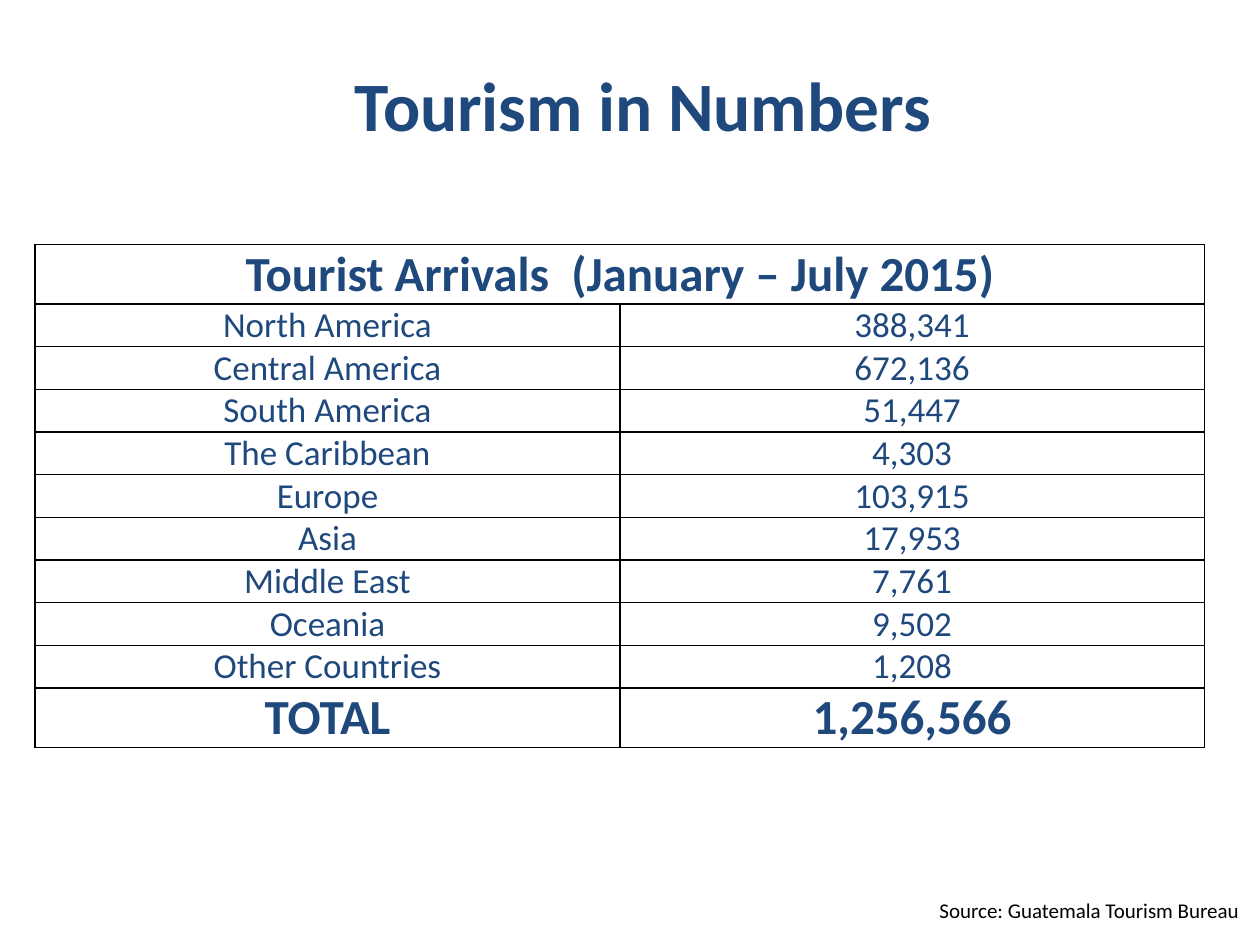
from lxml.etree import SubElement
from pptx import Presentation
from pptx.dml.color import RGBColor
from pptx.enum.text import MSO_ANCHOR, PP_ALIGN
from pptx.oxml.ns import qn
from pptx.util import Cm, Pt

COLORS = {"navy": "1F497D", "black": "000000"}
FONT = "Calibri"
HEADING = "Tourist Arrivals  (January – July 2015)"
ARRIVALS = [
    ("North America", "388,341"),
    ("Central America", "672,136"),
    ("South America", "51,447"),
    ("The Caribbean", "4,303"),
    ("Europe", "103,915"),
    ("Asia", "17,953"),
    ("Middle East", "7,761"),
    ("Oceania", "9,502"),
    ("Other Countries", "1,208"),
    ("TOTAL", "1,256,566"),
]
LARGE_ROW, SMALL_ROW = 1.2, 0.86


def write_text(text_frame, text, size, color, bold=False, align=PP_ALIGN.LEFT):
    text_frame.text = text
    paragraph = text_frame.paragraphs[0]
    paragraph.alignment = align
    font = paragraph.runs[0].font
    font.name, font.size, font.bold = FONT, Pt(size), bold
    font.color.rgb = RGBColor.from_string(COLORS[color])


def add_text(slide, box, text, size, color, **style):
    shape = slide.shapes.add_textbox(*map(Cm, box))
    shape.text_frame.word_wrap = True
    shape.text_frame.vertical_anchor = MSO_ANCHOR.MIDDLE
    write_text(shape.text_frame, text, size, color, **style)


def add_borders(cell):
    properties = cell._tc.get_or_add_tcPr()
    for position, side in enumerate(("a:lnL", "a:lnR", "a:lnT", "a:lnB")):
        line = properties.makeelement(qn(side), {"w": str(Pt(1))})
        fill = SubElement(line, qn("a:solidFill"))
        SubElement(fill, qn("a:srgbClr"), val=COLORS["black"])
        properties.insert(position, line)


def add_arrivals_table(slide, box):
    left, top, width, height = map(Cm, box)
    rows = [(HEADING, "")] + ARRIVALS
    table = slide.shapes.add_table(len(rows), 2, left, top, width, height).table
    table.first_row = table.horz_banding = False
    table.cell(0, 0).merge(table.cell(0, 1))

    for row_index, values in enumerate(rows):
        is_large = row_index in (0, len(rows) - 1)
        table.rows[row_index].height = Cm(LARGE_ROW if is_large else SMALL_ROW)
        for column_index, value in enumerate(values):
            cell = table.cell(row_index, column_index)
            cell.margin_left = cell.margin_right = Cm(0.18)
            cell.margin_top = cell.margin_bottom = 0
            cell.fill.background()
            add_borders(cell)
            # Figures from the third region down sit on the cell bottom
            if column_index == 1 and row_index >= 3:
                cell.vertical_anchor = MSO_ANCHOR.BOTTOM
            if value:
                write_text(cell.text_frame, value, 28 if is_large else 20,
                           "navy", bold=is_large, align=PP_ALIGN.CENTER)


def main():
    presentation = Presentation()
    presentation.slide_width, presentation.slide_height = Cm(25.4), Cm(19.05)
    slide = presentation.slides.add_slide(presentation.slide_layouts[6])

    # Title
    add_text(slide, (2.26, 0.85, 21.41, 2.5), "Tourism in Numbers", 39.6, "navy",
             bold=True, align=PP_ALIGN.CENTER)
    # Arrivals by region
    table_height = 2 * LARGE_ROW + (len(ARRIVALS) - 1) * SMALL_ROW
    add_arrivals_table(slide, (0.71, 4.93, 23.57, table_height))
    # Source line
    add_text(slide, (18.69, 17.96, 11, 0.76), "Source: Guatemala Tourism Bureau",
             12, "black")

    presentation.save("out.pptx")


if __name__ == "__main__":
    main()
